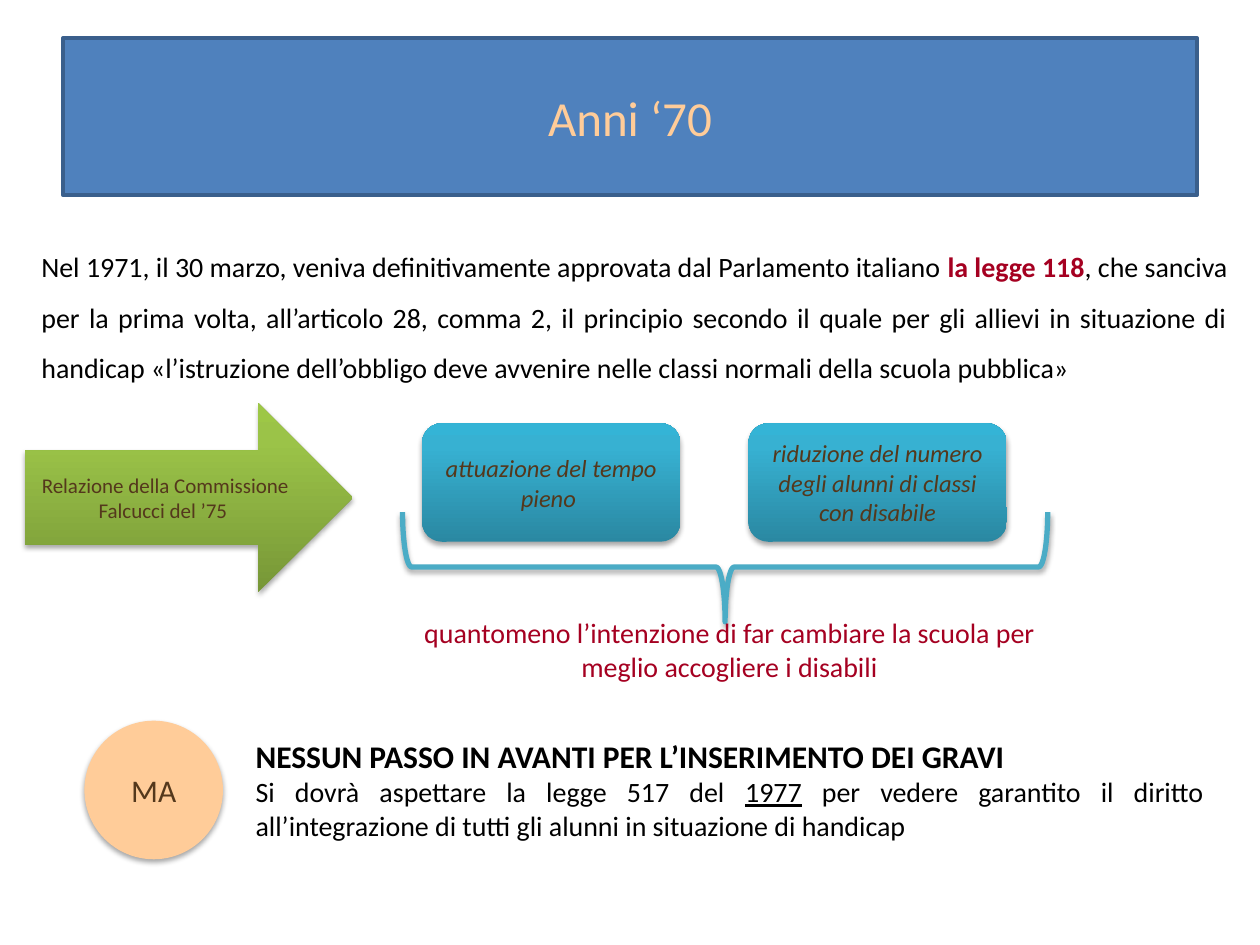
import pptx
import pptx.dml.color
import pptx.enum.shapes
import pptx.enum.text
import pptx.oxml
import pptx.oxml.ns
import pptx.util

SHAPES = pptx.enum.shapes.MSO_SHAPE
ALIGN = pptx.enum.text.PP_ALIGN
color = pptx.dml.color.RGBColor.from_string
NAMESPACE = pptx.oxml.ns.nsdecls("a")
BROWN, PEACH, CRIMSON, BLACK = "54381C", "FFCC99", "A50021", "000000"
GREENS = ("779737", "9BC348", "9DC746")
TEALS = ("2A88A2", "37B1D2", "34B4D6")

presentation = pptx.Presentation()
presentation.slide_width = pptx.util.Inches(10)
presentation.slide_height = pptx.util.Inches(7.5)
slide = presentation.slides.add_slide(presentation.slide_layouts[6])

# Grid of 100 columns by 75 rows
column = presentation.slide_width / 100
row = presentation.slide_height / 75


def place(left, top, width, height):
    return [round(length) for length in (left * column, top * row, width * column, height * row)]


def write(shape, align, paragraphs):
    """Fill a shape with paragraphs of (text, size, colour, styles) runs."""
    text_frame = shape.text_frame
    text_frame.word_wrap = True
    for index, runs in enumerate(paragraphs):
        paragraph = text_frame.paragraphs[0] if index == 0 else text_frame.add_paragraph()
        paragraph.alignment = align
        for text, size, hex_color, styles in runs:
            run = paragraph.add_run()
            run.text = text
            run.font.name = "Calibri"
            run.font.size = pptx.util.Pt(size)
            run.font.color.rgb = color(hex_color)
            for style in styles:
                setattr(run.font, style, True)


# Title banner
banner = slide.shapes.add_shape(SHAPES.RECTANGLE, *place(5, 3, 90, 12.5))
banner.shadow.inherit = False
banner.fill.solid()
banner.fill.fore_color.rgb = color("4F81BD")
banner.line.color.rgb = color("3A5F8C")
banner.line.width = pptx.util.Pt(2)
write(banner, ALIGN.CENTER, [[("Anni ‘70", 28, PEACH, [])]])

# Shadowed shapes: arrow, two measures, brace and circle
measure_left, measure_step = 33.5, 25.9
parts = [
    (SHAPES.RIGHT_ARROW, (2, 32, 26, 15), GREENS,
     ("Relazione della Commissione Falcucci del ’75 ", 12, BROWN, [])),
    (SHAPES.ROUNDED_RECTANGLE, (measure_left, 33.6, 20.5, 9.4), TEALS,
     ("attuazione del tempo pieno ", 14, BROWN, ["italic"])),
    (SHAPES.ROUNDED_RECTANGLE, (measure_left + measure_step, 33.6, 20.5, 9.4), TEALS,
     ("riduzione del numero degli alunni di classi con disabile", 14, BROWN, ["italic"])),
    (SHAPES.LEFT_BRACE, (53.2, 19.4, 8.7, 51.2), None, None),
    (SHAPES.OVAL, (6.7, 57.2, 11, 11), PEACH, ("MA", 18, BROWN, [])),
]
for kind, box, fill, label in parts:
    shape = slide.shapes.add_shape(kind, *place(*box))
    if fill is None:
        shape.rotation = 270
        shape.fill.background()
        shape.line.color.rgb = color("4BACC6")
        shape.line.width = pptx.util.Pt(3)
    else:
        shape.line.fill.background()
        shape.fill.solid()
        if isinstance(fill, str):
            shape.fill.fore_color.rgb = color(fill)
        else:
            stops = "".join(
                f'<a:gs pos="{position}"><a:srgbClr val="{color(stop)}"/></a:gs>'
                for position, stop in zip((0, 80000, 100000), fill))
            gradient = pptx.oxml.parse_xml(
                f'<a:gradFill {NAMESPACE} rotWithShape="1"><a:gsLst>{stops}</a:gsLst>'
                '<a:lin ang="16200000" scaled="0"/></a:gradFill>')
            properties = shape._element.spPr
            properties.replace(properties.find(pptx.oxml.ns.qn("a:solidFill")), gradient)

    # Soft shadow straight below
    shape.shadow.inherit = False
    effects = shape._element.spPr.find(pptx.oxml.ns.qn("a:effectLst"))
    effects.append(pptx.oxml.parse_xml(
        f'<a:outerShdw {NAMESPACE} blurRad="{pptx.util.Pt(3.1)}" dist="{pptx.util.Pt(1.8)}" '
        f'dir="5400000" rotWithShape="0"><a:srgbClr val="{color(BLACK)}">'
        '<a:alpha val="35000"/></a:srgbClr></a:outerShdw>'))
    if label:
        write(shape, ALIGN.CENTER, [[label]])

# Text blocks
texts = [
    ((31.9, 48.4, 52, 6.4), ALIGN.CENTER, 1, [
        [("quantomeno l’intenzione di far cambiare la scuola per meglio accogliere i disabili",
          16, CRIMSON, [])]]),
    ((19.3, 58, 77.2, 9.4), ALIGN.JUSTIFY, 1, [
        [("NESSUN PASSO IN AVANTI PER L’INSERIMENTO DEI GRAVI", 18, BLACK, ["bold"])],
        [("Si dovrà aspettare la legge 517 del ", 16, BLACK, []),
         ("1977", 16, BLACK, ["underline"]),
         (" per vedere garantito il diritto all’integrazione di tutti gli alunni "
          "in situazione di handicap", 16, BLACK, [])]]),
    ((2.3, 18, 96.1, 12.7), ALIGN.JUSTIFY, 1.5, [
        [("Nel 1971, il 30 marzo, veniva definitivamente approvata dal Parlamento italiano ",
          16, BLACK, []),
         ("la legge 118", 16, CRIMSON, ["bold"]),
         (", che sanciva per la prima volta, all’articolo 28, comma 2, il principio secondo "
          "il quale per gli allievi in situazione di handicap «l’istruzione dell’obbligo deve "
          "avvenire nelle classi normali della scuola pubblica»", 16, BLACK, [])]]),
]
for box, align, spacing, paragraphs in texts:
    text_box = slide.shapes.add_textbox(*place(*box))
    write(text_box, align, paragraphs)
    text_box.text_frame.auto_size = pptx.enum.text.MSO_AUTO_SIZE.SHAPE_TO_FIT_TEXT
    for paragraph in text_box.text_frame.paragraphs:
        paragraph.line_spacing = float(spacing)

presentation.save("out.pptx")
